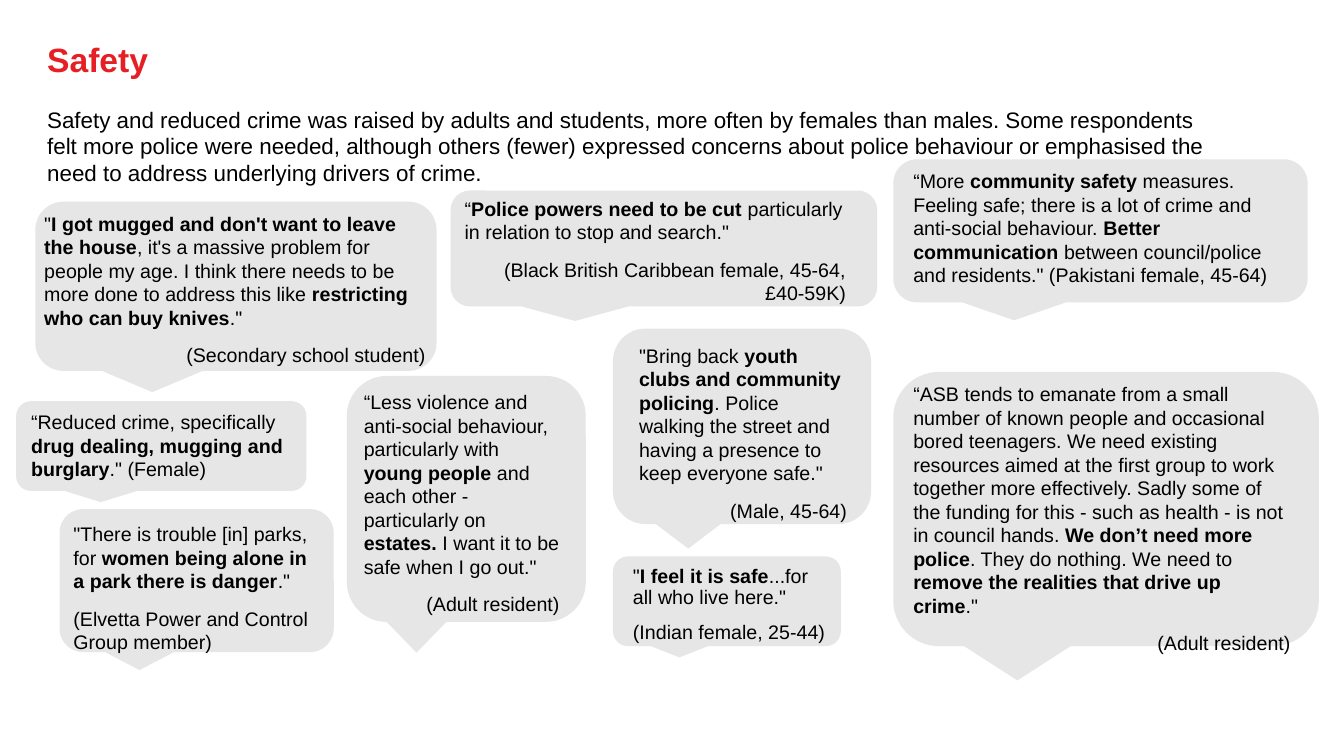
from pptx import Presentation
from pptx.dml.color import RGBColor
from pptx.enum.shapes import MSO_SHAPE as Shape
from pptx.enum.text import MSO_ANCHOR as Anchor, PP_ALIGN as Align
from pptx.util import Inches, Pt

COLOURS = {"heading": "E51F23", "text": "000000", "bubble": "E7E6E6"}

# Each quote: bubble box, text box, quotation (** marks bold), speaker, options
QUOTES = [
    ((0.35, 2, 3.98, 1.68), (0.34, 2.05, 3.98, 1.62),
     "\"**I got mugged and don't want to leave the house**, it's a massive problem for people my age. "
     "I think there needs to be more done to address this like **restricting who can buy knives**.\"",
     "(Secondary school student)", {}),
    ((4.47, 1.89, 4.23, 1.15), (4.51, 1.9, 3.98, 1.03),
     "“**Police powers need to be cut** particularly in relation to stop and search.\"",
     "(Black British Caribbean female, 45-64, £40-59K)", {}),
    ((8.86, 1.58, 4.11, 1.42), (8.96, 1.63, 3.78, 1.3),
     "“More **community safety** measures. Feeling safe; there is a lot of crime and anti-social "
     "behaviour. **Better communication** between council/police and residents.\" "
     "(Pakistani female, 45-64)", None, {}),
    ((0.16, 3.98, 2.88, 0.89), (0.21, 4.02, 2.76, 0.72),
     "“Reduced crime, specifically **drug dealing, mugging and burglary**.\" (Female)", None, {}),
    ((3.44, 3.73, 2.37, 2.44), (3.51, 3.82, 2.14, 2.16),
     "“Less violence and anti-social behaviour, particularly with **young people** and each other - "
     "particularly on **estates.** I want it to be safe when I go out.\"",
     "(Adult resident)", {}),
    ((6.08, 3.26, 2.56, 1.94), (6.24, 3.36, 2.26, 1.69),
     "\"Bring back **youth clubs and community policing**. Police walking the street and having "
     "a presence to keep everyone safe.\"",
     "(Male, 45-64)", {}),
    ((0.59, 5.05, 2.72, 1.42), (0.63, 5.13, 2.65, 1.22),
     "\"There is trouble [in] parks, for **women being alone in a park there is danger**.\"",
     "(Elvetta Power and Control Group member)", {"speaker_align": Align.LEFT}),
    ((6.08, 5.52, 2.26, 0.89), (6.18, 5.57, 2.16, 0.89),
     "\"**I feel it is safe**...for all who live here.\"",
     "(Indian female, 25-44)", {"speaker_align": Align.LEFT, "spacing": 0.9}),
    ((8.86, 3.69, 4.22, 2.72), (8.96, 3.74, 3.94, 2.33),
     "“ASB tends to emanate from a small number of known people and occasional bored teenagers. "
     "We need existing resources aimed at the first group to work together more effectively. "
     "Sadly some of the funding for this - such as health - is not in council hands. "
     "**We don’t need more police**. They do nothing. We need to "
     "**remove the realities that drive up crime**.\"",
     "(Adult resident)", {}),
]


class QuoteSlide:
    font = "Arial"

    def __init__(self, deck):
        self.slide = deck.slides.add_slide(deck.slide_layouts[6])

    def bubble(self, box):
        callout = self.slide.shapes.add_shape(
            Shape.ROUNDED_RECTANGULAR_CALLOUT, *map(Inches, box))
        callout.shadow.inherit = False
        callout.fill.solid()
        callout.fill.fore_color.rgb = RGBColor.from_string(COLOURS["bubble"])
        callout.line.fill.background()

    def text(self, box, paragraphs, size, colour="text", anchor=Anchor.TOP, spacing=1.0):
        """Write (wording, alignment) pairs; ** switches bold on and off."""
        frame = self.slide.shapes.add_textbox(*map(Inches, box)).text_frame
        frame.word_wrap = True
        frame.vertical_anchor = anchor
        for index, (wording, align) in enumerate(paragraphs):
            paragraph = frame.add_paragraph() if index else frame.paragraphs[0]
            paragraph.alignment = align
            paragraph.line_spacing = spacing
            paragraph.space_before = Pt(10 if index else 0)
            for part, words in enumerate(wording.split("**")):
                if words:
                    run = paragraph.add_run()
                    run.text = words
                    run.font.name = self.font
                    run.font.size = Pt(size)
                    run.font.bold = part % 2 == 1
                    run.font.color.rgb = RGBColor.from_string(COLOURS[colour])

    def quote(self, bubble_box, text_box, quotation, speaker,
              speaker_align=Align.RIGHT, spacing=1.0):
        self.bubble(bubble_box)
        paragraphs = [(quotation, Align.LEFT)]
        if speaker:
            paragraphs.append((speaker, speaker_align))
        self.text(text_box, paragraphs, 14, spacing=spacing)


def main():
    deck = Presentation()
    deck.slide_width, deck.slide_height = Inches(13.33), Inches(7.5)
    safety = QuoteSlide(deck)
    safety.text((0.37, 0.35, 11.5, 0.52), [("**Safety**", Align.LEFT)], 24,
                colour="heading", anchor=Anchor.MIDDLE, spacing=0.9)
    summary = ("Safety and reduced crime was raised by adults and students, more often by females "
               "than males. Some respondents felt more police were needed, although others (fewer) "
               "expressed concerns about police behaviour or emphasised the need to address "
               "underlying drivers of crime.")
    safety.text((0.37, 1, 11.77, 1.04), [(summary, Align.LEFT)], 16)
    for bubble_box, text_box, quotation, speaker, options in QUOTES:
        safety.quote(bubble_box, text_box, quotation, speaker, **options)
    deck.save("out.pptx")


if __name__ == "__main__":
    main()
